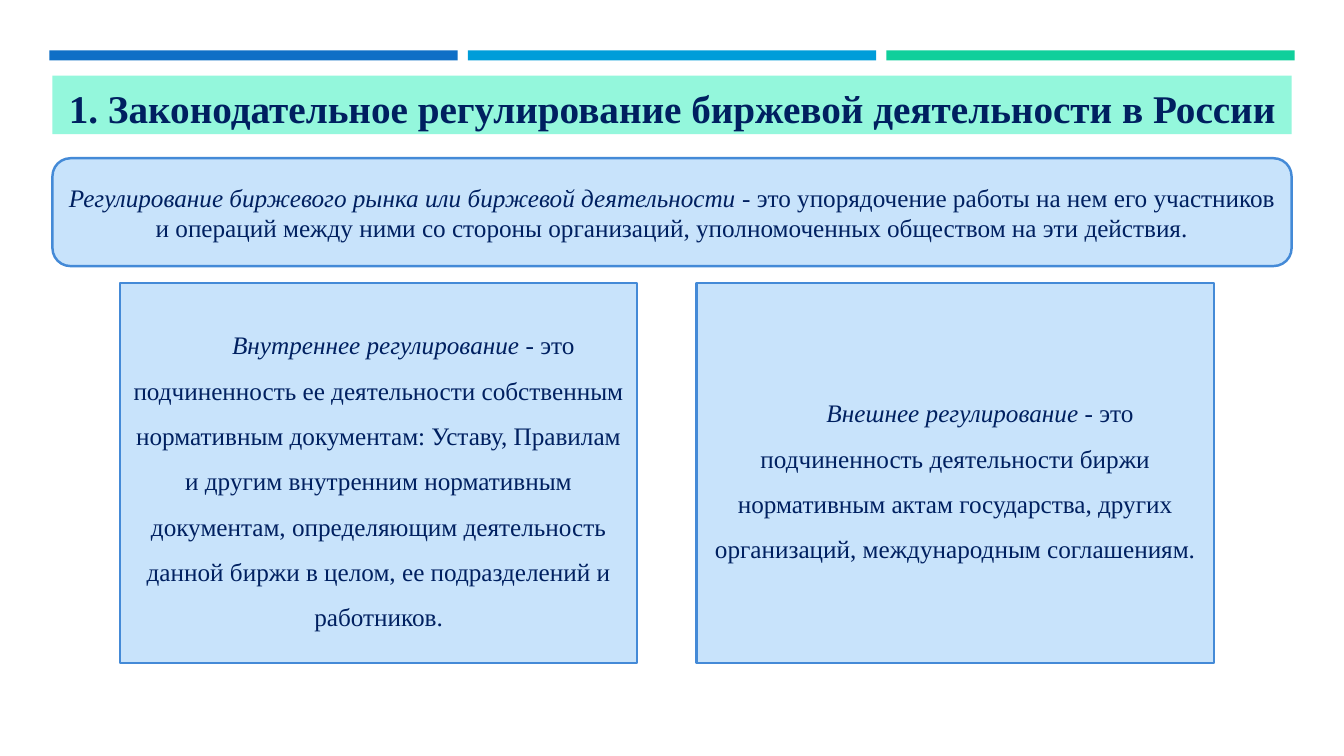
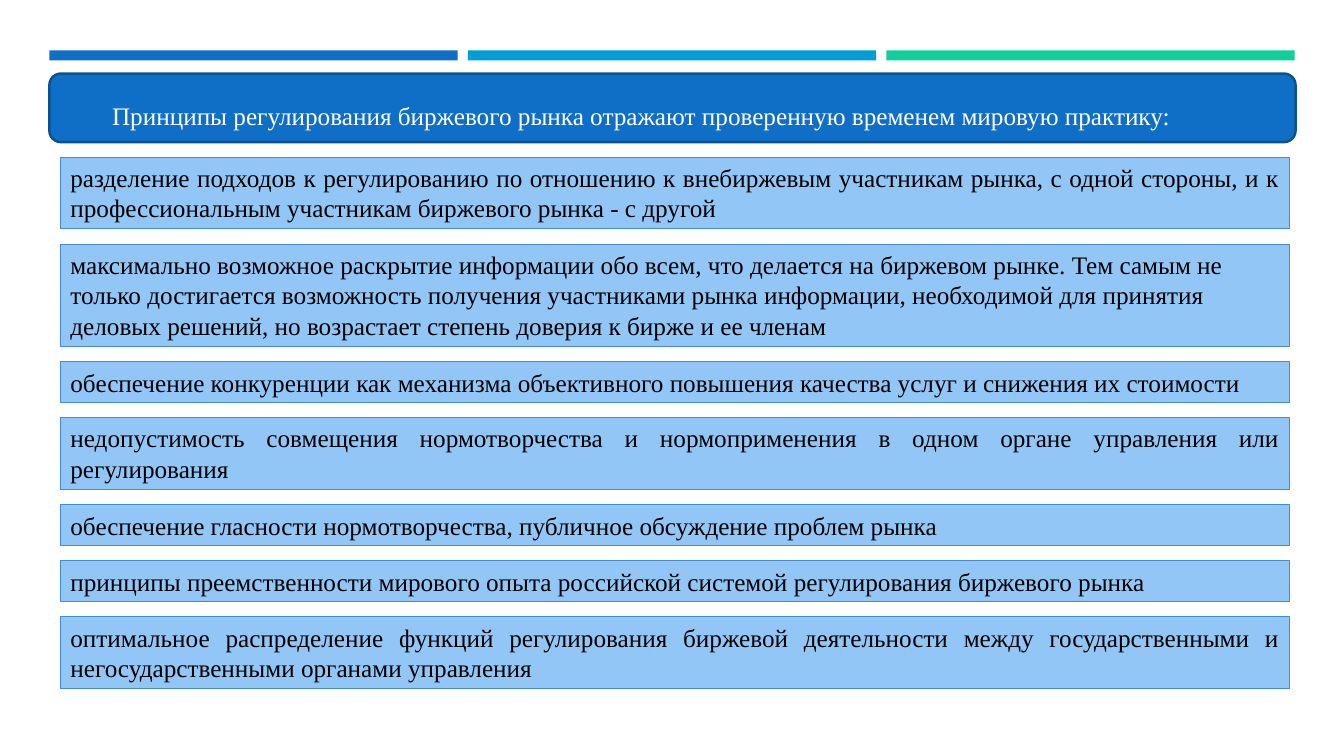
from pptx import Presentation
from pptx.dml.color import RGBColor
from pptx.enum.shapes import MSO_SHAPE
from pptx.enum.text import MSO_ANCHOR, MSO_AUTO_SIZE, PP_ALIGN
from pptx.util import Pt

RECT, ROUNDED = MSO_SHAPE.RECTANGLE, MSO_SHAPE.ROUNDED_RECTANGLE
LEFT, CENTER, JUSTIFY = PP_ALIGN.LEFT, PP_ALIGN.CENTER, PP_ALIGN.JUSTIFY
TOP, MIDDLE = MSO_ANCHOR.TOP, MSO_ANCHOR.MIDDLE
GROW = MSO_AUTO_SIZE.SHAPE_TO_FIT_TEXT

PX = 9144  # 100 px to the inch
SLIDE_W, SLIDE_H = 1333, 750
FONT = "Times New Roman"
BLUE, SKY, GREEN = "0F6FC6", "009DD9", "10CF9B"
MINT, PALE, LIGHT = "94F7DC", "C8E3FB", "91C6F7"
OUTLINE, DARK_OUTLINE = "448AD7", "0B5292"
NAVY, WHITE, BLACK = "002060", "FFFFFF", "000000"
FIRST_LINE = 49

DEFINITION = [
    ("Регулирование биржевого рынка или биржевой деятельности", True),
    (" - это упорядочение работы на нем его участников и операций между ними со "
     "стороны организаций, уполномоченных обществом на эти действия.", False),
]
REGULATION_KINDS = [
    [("Внутреннее регулирование", True),
     (" - это подчиненность ее деятельности собственным нормативным документам: "
      "Уставу, Правилам и другим внутренним нормативным документам, определяющим "
      "деятельность данной биржи в целом, ее подразделений и работников.", False)],
    [("Внешнее регулирование", True),
     (" - это подчиненность деятельности биржи нормативным актам государства, "
      "других организаций, международным соглашениям.", False)],
]
# Text, number of lines, alignment
PRINCIPLES = [
    ("разделение подходов к регулированию по отношению к внебиржевым участникам "
     "рынка, с одной стороны, и к профессиональным участникам биржевого рынка - "
     "с другой", 2, JUSTIFY),
    ("максимально возможное раскрытие информации обо всем, что делается на биржевом "
     "рынке. Тем самым не только достигается возможность получения участниками рынка "
     "информации, необходимой для принятия деловых решений, но возрастает степень "
     "доверия к бирже и ее членам", 3, LEFT),
    ("обеспечение конкуренции как механизма объективного повышения качества услуг "
     "и снижения их стоимости", 1, JUSTIFY),
    ("недопустимость совмещения нормотворчества и нормоприменения в одном органе "
     "управления или регулирования", 2, JUSTIFY),
    ("обеспечение гласности нормотворчества, публичное обсуждение проблем рынка",
     1, LEFT),
    ("принципы преемственности мирового опыта российской системой регулирования "
     "биржевого рынка", 1, LEFT),
    ("оптимальное распределение функций регулирования биржевой деятельности между "
     "государственными и негосударственными органами управления", 2, JUSTIFY),
]
ROW_HEIGHTS = {1: 40, 2: 71, 3: 101}


def px(length):
    return round(length * PX)


def color(value):
    return RGBColor.from_string(value)


def set_all(target, formats):
    for name, value in formats.items():
        setattr(target, name, value)


def add_panel(slide, box, fill, outline=None, line_width=1.75, kind=RECT):
    panel = slide.shapes.add_shape(kind, *map(px, box))
    panel.shadow.inherit = False
    panel.fill.solid()
    panel.fill.fore_color.rgb = color(fill)
    if outline:
        panel.line.color.rgb = color(outline)
        panel.line.width = Pt(line_width)
    else:
        panel.line.fill.background()
    return panel


def write(panel, runs, text_color, size=18, bold=False, indent=0, frame=None, **paragraph):
    text_frame = panel.text_frame
    set_all(text_frame, {"word_wrap": True, "vertical_anchor": MIDDLE, **(frame or {})})
    line = text_frame.paragraphs[0]
    set_all(line, paragraph)
    if indent:
        line._p.get_or_add_pPr().set("indent", str(px(indent)))
    for text, italic in runs:
        run = line.add_run()
        run.text = text
        set_all(run.font, {"name": FONT, "size": Pt(size), "bold": bold, "italic": italic})
        run.font.color.rgb = color(text_color)


def new_slide(deck):
    """Add a blank slide with the three-colour band on top."""
    slide = deck.slides.add_slide(deck.slide_layouts[6])
    for column, fill in enumerate((BLUE, SKY, GREEN)):
        add_panel(slide, (49 + column * 415, 50, 405, 10), fill)
    return slide


def add_legislation_slide(deck):
    slide = new_slide(deck)
    # Title
    title = add_panel(slide, (52, 75, 1229, 58), MINT)
    write(title, [("1. Законодательное регулирование биржевой деятельности в России", False)],
          NAVY, size=28, bold=True, alignment=CENTER, line_spacing=1.07, space_after=Pt(13),
          frame={"word_wrap": False, "vertical_anchor": TOP, "auto_size": GROW})
    # Definition
    definition = add_panel(slide, (52, 157, 1229, 107), PALE, OUTLINE, kind=ROUNDED)
    write(definition, DEFINITION, NAVY, alignment=CENTER)
    # Two kinds of regulation
    for column, runs in enumerate(REGULATION_KINDS):
        card = add_panel(slide, (119 + column * 572, 281, 513, 377), PALE, OUTLINE)
        write(card, runs, NAVY, indent=FIRST_LINE, alignment=CENTER, line_spacing=1.5)


def add_principles_slide(deck):
    slide = new_slide(deck)
    # Heading
    heading = add_panel(slide, (49, 73, 1236, 68), BLUE, DARK_OUTLINE, kind=ROUNDED)
    write(heading, [("Принципы регулирования биржевого рынка отражают проверенную "
                     "временем мировую практику:", False)],
          WHITE, indent=FIRST_LINE, alignment=JUSTIFY, line_spacing=1.5)
    # Rows spread evenly between the first top and the last bottom
    top, bottom = 156, 683
    used = sum(ROW_HEIGHTS[lines] for _, lines, _ in PRINCIPLES)
    gap = (bottom - top - used) / (len(PRINCIPLES) - 1)
    for text, lines, alignment in PRINCIPLES:
        height = ROW_HEIGHTS[lines]
        row = add_panel(slide, (60, top, 1219, height), LIGHT, OUTLINE, 0.75)
        write(row, [(text, False)], BLACK, alignment=alignment,
              frame={"vertical_anchor": TOP, "auto_size": GROW})
        top += height + gap


def main():
    deck = Presentation()
    set_all(deck, {"slide_width": px(SLIDE_W), "slide_height": px(SLIDE_H)})
    add_legislation_slide(deck)
    add_principles_slide(deck)
    deck.save("out.pptx")


if __name__ == "__main__":
    main()
